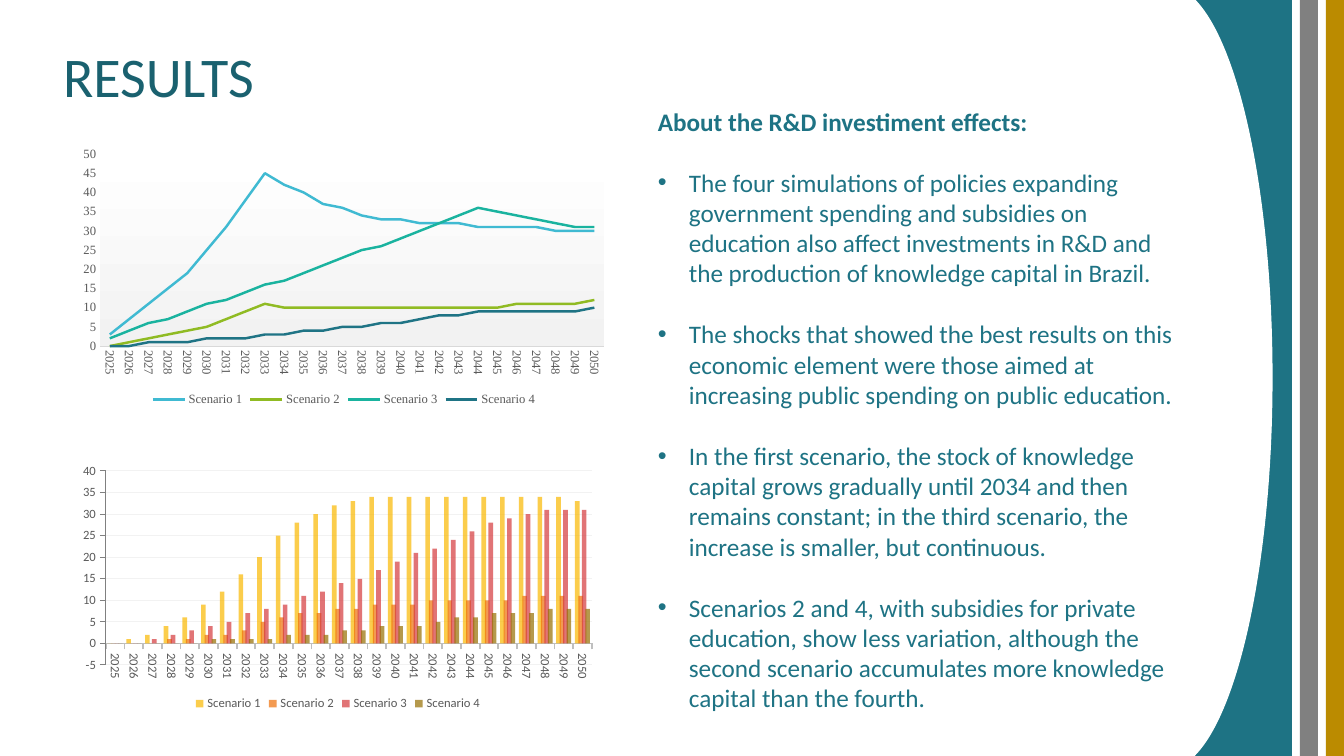
from lxml import etree
from pptx import Presentation
from pptx import util as u
from pptx.chart.data import CategoryChartData
from pptx.dml.color import RGBColor
from pptx.enum import chart as ch, shapes, text
from pptx.oxml import parse_xml
from pptx.oxml.ns import nsdecls, qn

# Colours
TITLE_TEAL = RGBColor(0x1A, 0x61, 0x6F)
TEAL = RGBColor(0x1E, 0x73, 0x84)
GREY = RGBColor(0x80, 0x80, 0x80)
OCHRE = RGBColor(0xBB, 0x8B, 0x00)
WHITE = RGBColor(0xFF, 0xFF, 0xFF)
LABEL = RGBColor(0x59, 0x59, 0x59)
GRID = RGBColor(0xF2, 0xF2, 0xF2)
LINE_AXIS = RGBColor(0xD9, 0xD9, 0xD9)
COLUMN_AXIS = RGBColor(0xBF, 0xBF, 0xBF)
LINE_COLOURS = [RGBColor(0x40, 0xBA, 0xD2), RGBColor(0x90, 0xBB, 0x23),
                RGBColor(0x1A, 0xB3, 0x9F), RGBColor(0x1F, 0x74, 0x85)]
COLUMN_COLOURS = [RGBColor(0xFA, 0xB9, 0x00), RGBColor(0xEE, 0x70, 0x08),
                  RGBColor(0xD5, 0x39, 0x3D), RGBColor(0x96, 0x6F, 0x00)]

# Content; boxes are left, top, width, height in px
TITLE = "RESULTS"
HEADING = "About the R&D investiment effects:"
BULLETS = [
    "The four simulations of policies expanding government spending and subsidies on "
    "education also affect investments in R&D and the production of knowledge capital in Brazil.",
    "The shocks that showed the best results on this economic element were those aimed at "
    "increasing public spending on public education.",
    "In the first scenario, the stock of knowledge capital grows gradually until 2034 and then "
    "remains constant; in the third scenario, the increase is smaller, but continuous.",
    "Scenarios 2 and 4, with subsidies for private education, show less variation, although the "
    "second scenario accumulates more knowledge capital than the fourth.",
]
DECORATION = [
    (shapes.MSO_SHAPE.RECTANGLE, (1167, 0, 125, 756), TEAL),
    (shapes.MSO_SHAPE.RECTANGLE, (1300, 0, 18, 756), GREY),
    (shapes.MSO_SHAPE.RECTANGLE, (1326, 0, 18, 756), OCHRE),
    (shapes.MSO_SHAPE.OVAL, (1062, -14, 210, 783), WHITE),
]
YEARS = [str(year) for year in range(2025, 2051)]
INVESTMENT = [
    [3, 7, 11, 15, 19, 25, 31, 38, 45, 42, 40, 37, 36, 34, 33, 33, 32, 32, 32, 31, 31, 31, 31, 30, 30, 30],
    [0, 1, 2, 3, 4, 5, 7, 9, 11, 10, 10, 10, 10, 10, 10, 10, 10, 10, 10, 10, 10, 11, 11, 11, 11, 12],
    [2, 4, 6, 7, 9, 11, 12, 14, 16, 17, 19, 21, 23, 25, 26, 28, 30, 32, 34, 36, 35, 34, 33, 32, 31, 31],
    [0, 0, 1, 1, 1, 2, 2, 2, 3, 3, 4, 4, 5, 5, 6, 6, 7, 8, 8, 9, 9, 9, 9, 9, 9, 10],
]
KNOWLEDGE = [
    [0, 1, 2, 4, 6, 9, 12, 16, 20, 25, 28, 30, 32, 33, 34, 34, 34, 34, 34, 34, 34, 34, 34, 34, 34, 33],
    [0, 0, 0, 1, 1, 2, 2, 3, 5, 6, 7, 7, 8, 8, 9, 9, 9, 10, 10, 10, 10, 10, 11, 11, 11, 11],
    [0, 0, 1, 2, 3, 4, 5, 7, 8, 9, 11, 12, 14, 15, 17, 19, 21, 22, 24, 26, 28, 29, 30, 31, 31, 31],
    [0, 0, 0, 0, 0, 1, 1, 1, 1, 2, 2, 2, 3, 3, 4, 4, 4, 5, 6, 6, 7, 7, 7, 8, 8, 8],
]


def px(length):
    return u.Inches(length / 100.8)


def place(box):
    return [px(length) for length in box]


def add_scenario_chart(kind, box, plot_box, values, font_name, low, high, tick):
    """Add a yearly chart with the settings that both charts share."""
    data = CategoryChartData()
    data.categories = YEARS
    for number, row in enumerate(values, 1):
        data.add_series(f"Scenario {number}", row)
    chart = slide.shapes.add_chart(kind, *place(box), data).chart
    chart.has_title = False
    chart.font.size = u.Pt(10)
    chart.font.name = "Calibri"
    chart.has_legend = True
    chart.legend.position = ch.XL_LEGEND_POSITION.BOTTOM
    chart.legend.include_in_layout = False
    chart.plots[0].vary_by_categories = False

    years, scale = chart.category_axis, chart.value_axis
    scale.minimum_scale, scale.maximum_scale, scale.major_unit = low, high, 5
    scale.has_major_gridlines = False
    for axis in (years, scale):
        axis.major_tick_mark = tick
        axis.minor_tick_mark = ch.XL_TICK_MARK.NONE
    for font in (years.tick_labels.font, scale.tick_labels.font, chart.legend.font):
        font.size = u.Pt(9)
        font.name = font_name
        font.color.rgb = LABEL
    # Vertical year labels
    body = chart.element.xpath("//c:catAx/c:txPr/a:bodyPr")[0]
    body.set("rot", "5400000")
    body.set("vert", "horz")

    # Inner plot position as fractions of the chart box
    plot_area = chart.element.xpath("//c:plotArea")[0]
    for layout in plot_area.findall(qn("c:layout")):
        plot_area.remove(layout)
    fractions = ((plot_box[0] - box[0]) / box[2], (plot_box[1] - box[1]) / box[3],
                 plot_box[2] / box[2], plot_box[3] / box[3])
    sizes = "".join(f'<c:{tag} val="{value:.3f}"/>' for tag, value in zip("xywh", fractions))
    plot_area.insert(0, parse_xml(
        f'<c:layout {nsdecls("c")}><c:manualLayout><c:layoutTarget val="inner"/>'
        f'<c:xMode val="edge"/><c:yMode val="edge"/>{sizes}</c:manualLayout></c:layout>'))
    return chart


presentation = Presentation()
presentation.slide_width, presentation.slide_height = px(1344), px(756)
slide = presentation.slides.add_slide(presentation.slide_layouts[5])

# Title
title = slide.shapes.title
title.left, title.top, title.width, title.height = place((53, 36, 1159, 87))
title.text_frame.text = TITLE
title.text_frame.auto_size = text.MSO_AUTO_SIZE.NONE
title.text_frame.vertical_anchor = text.MSO_ANCHOR.MIDDLE
paragraph = title.text_frame.paragraphs[0]
paragraph.alignment = text.PP_ALIGN.LEFT
paragraph.line_spacing = 0.9
paragraph.font.size = u.Pt(40)
paragraph.font.name = "Calibri"
paragraph.font.color.rgb = TITLE_TEAL

# Bars and curved edge on the right
for preset, box, colour in DECORATION:
    shape = slide.shapes.add_shape(preset, *place(box))
    shape.shadow.inherit = False
    shape.fill.solid()
    shape.fill.fore_color.rgb = colour
    if preset == shapes.MSO_SHAPE.OVAL:
        shape.line.color.rgb = WHITE
        shape.line.width = u.Pt(0.85)
    else:
        shape.line.fill.background()

# Line chart: investment
chart = add_scenario_chart(ch.XL_CHART_TYPE.LINE, (73, 142, 542, 269), (100, 154, 504, 192),
                           INVESTMENT, "Times New Roman", 0, 50, ch.XL_TICK_MARK.NONE)
chart.category_axis.format.line.color.rgb = LINE_AXIS
chart.category_axis.format.line.width = u.Pt(0.75)
chart.value_axis.format.line.fill.background()
for series, colour in zip(chart.plots[0].series, LINE_COLOURS):
    series.smooth = False
    series.marker.style = ch.XL_MARKER_STYLE.NONE
    series.format.line.color.rgb = colour
    series.format.line.width = u.Pt(1.75)
chart.element.xpath("//c:plotArea")[0].append(parse_xml(
    f'<c:spPr {nsdecls("c", "a")}><a:gradFill><a:gsLst>'
    f'<a:gs pos="0"><a:srgbClr val="{WHITE}"/></a:gs>'
    f'<a:gs pos="100000"><a:srgbClr val="{GRID}"/></a:gs>'
    '</a:gsLst><a:lin ang="5400000" scaled="0"/></a:gradFill></c:spPr>'))

# Policy text
frame = slide.shapes.add_textbox(*place((648, 101, 552, 621))).text_frame
frame.word_wrap = True
for index, words in enumerate([HEADING] + BULLETS):
    paragraph = frame.add_paragraph() if index else frame.paragraphs[0]
    paragraph.text = words
    if index:
        properties = paragraph._p.get_or_add_pPr()
        properties.set("marL", str(px(31)))
        properties.set("indent", str(-px(31)))
        etree.SubElement(properties, qn("a:buFont")).set("typeface", "Arial")
        etree.SubElement(properties, qn("a:buChar")).set("char", "•")
        paragraph.space_before = u.Pt(22)
    paragraph.font.size = u.Pt(18)
    paragraph.font.name = "Calibri"
    paragraph.font.bold = index == 0
    paragraph.font.color.rgb = TEAL

# Column chart: knowledge capital
chart = add_scenario_chart(ch.XL_CHART_TYPE.COLUMN_CLUSTERED, (73, 459, 530, 256),
                           (106, 471, 486, 194), KNOWLEDGE, "Calibri", -5, 40,
                           ch.XL_TICK_MARK.OUTSIDE)
chart.plots[0].gap_width = 80
chart.plots[0].overlap = 25
chart.value_axis.has_major_gridlines = True
for line, colour, width in (
        (chart.category_axis.format.line, COLUMN_AXIS, 1.25),
        (chart.value_axis.format.line, GREY, 0.75),
        (chart.value_axis.major_gridlines.format.line, GRID, 0.75)):
    line.color.rgb = colour
    line.width = u.Pt(width)
for series, colour in zip(chart.plots[0].series, COLUMN_COLOURS):
    series.invert_if_negative = False
    series.format.fill.solid()
    series.format.fill.fore_color.rgb = colour
for colour in chart.element.xpath("//c:ser/c:spPr/a:solidFill/a:srgbClr"):
    etree.SubElement(colour, qn("a:alpha")).set("val", "70000")

presentation.save("out.pptx")
